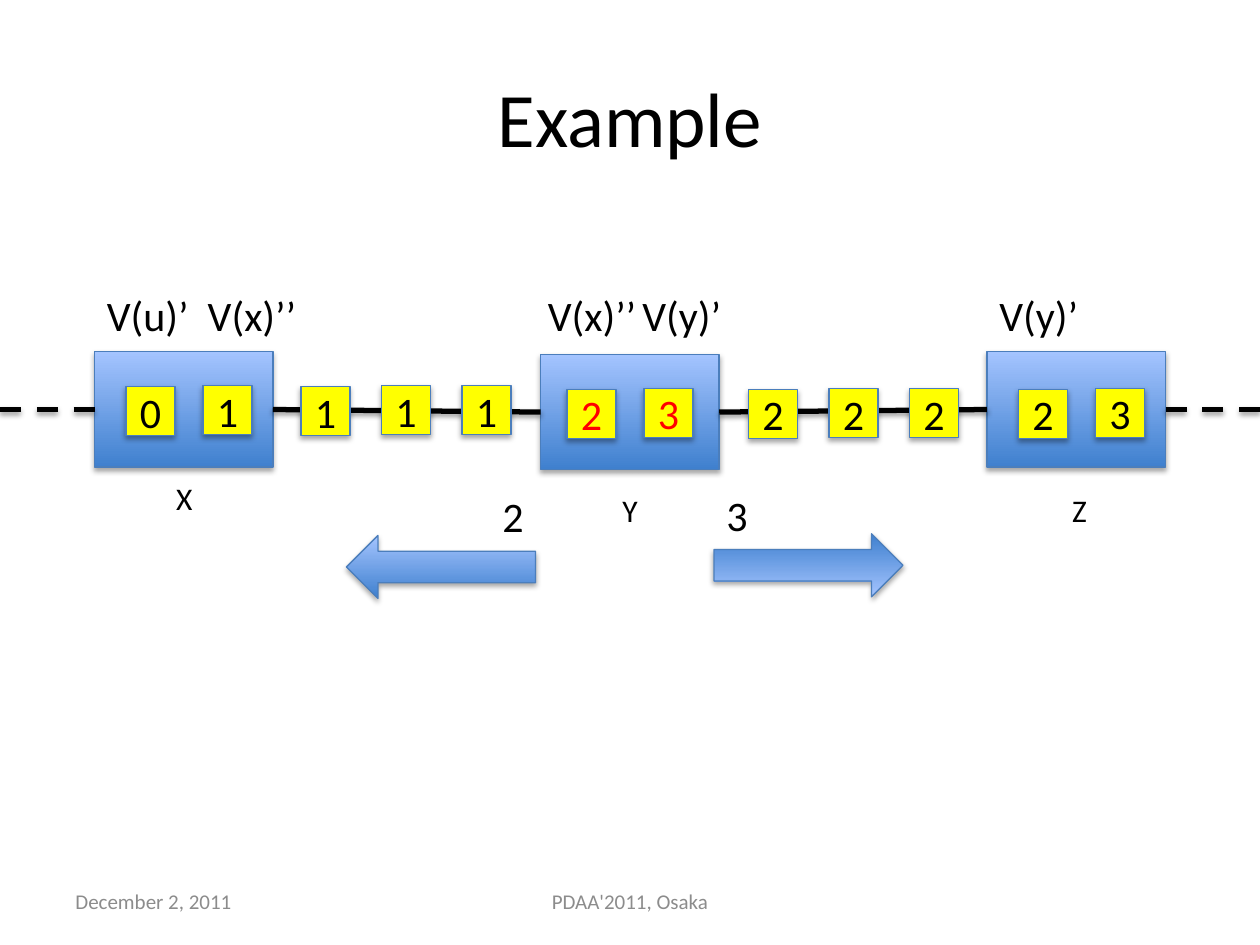
from lxml import etree
from pptx import Presentation
from pptx.dml.color import RGBColor
from pptx.enum.dml import MSO_LINE
from pptx.enum.shapes import MSO_CONNECTOR, MSO_SHAPE
from pptx.enum.text import MSO_ANCHOR, PP_ALIGN
from pptx.oxml.ns import qn
from pptx.util import Pt

HUES = {"ink": "000000", "red": "FF0000", "gray": "8C8C8C", "tile": "FFFF00",
        "edge": "4B7EBC", "deep": "3F80CE", "pale": "A4C4FF"}
WIDE, HIGH, SIDE = 102, 66, 28


def hue(name):
    return RGBColor.from_string(HUES[name])


def shade(shape, alpha, gap):
    props = shape._element.spPr
    for old in props.findall(qn("a:effectLst")):
        props.remove(old)
    group = etree.SubElement(props, qn("a:effectLst"))
    outer = etree.SubElement(group, qn("a:outerShdw"), blurRad=str(Pt(3.1)),
                             dist=str(Pt(gap)), dir="5400000", rotWithShape="0")
    tint = etree.SubElement(outer, qn("a:srgbClr"), val=HUES["ink"])
    etree.SubElement(tint, qn("a:alpha"), val=str(alpha * 1000))


def write(shape, text, size, color="ink", align=PP_ALIGN.LEFT, anchor=MSO_ANCHOR.TOP):
    frame = shape.text_frame
    frame.text = text
    frame.vertical_anchor = anchor
    para = frame.paragraphs[0]
    para.alignment = align
    for run in para.runs:
        run.font.name = "Calibri"
        run.font.size = Pt(size)
        run.font.color.rgb = hue(color)
    return para


def label(slide, box, text, size=24, wrap=False, **style):
    shape = slide.shapes.add_textbox(*map(Pt, box))
    shape.text_frame.word_wrap = wrap
    return write(shape, text, size, **style)


def block(slide, kind, box, flat=None):
    shape = slide.shapes.add_shape(kind, *map(Pt, box))
    if flat:
        shape.fill.solid()
        shape.fill.fore_color.rgb = hue(flat)
    else:
        shape.fill.gradient()
        shape.fill.gradient_angle = 90
        for stop, name in zip(shape.fill.gradient_stops, ("deep", "pale")):
            stop.color.rgb = hue(name)
    shape.line.color.rgb = hue("edge")
    shape.line.width = Pt(0.75)
    shade(shape, 35, 1.8)
    return shape


def tiles(slide, left, top, step, digits, color="ink"):
    for i, digit in enumerate(digits):
        box = (left + i * step, top - (0.5 if i else 0), SIDE, SIDE)
        shape = block(slide, MSO_SHAPE.RECTANGLE, box, "tile")
        write(shape, digit, 24, color, PP_ALIGN.CENTER, MSO_ANCHOR.MIDDLE)


def link(slide, start, end, first=None, last=None, dash=False):
    line = slide.shapes.add_connector(MSO_CONNECTOR.STRAIGHT, *map(Pt, start + end))
    if first:
        line.begin_connect(first, 3)
    if last:
        line.end_connect(last, 1)
    line.line.color.rgb = hue("ink")
    line.line.width = Pt(3)
    if dash:
        line.line.dash_style = MSO_LINE.DASH
    shade(line, 38, 1.6)


def chain(slide, left, top):
    tops = (top, top + 1.5, top)
    nodes = [block(slide, MSO_SHAPE.RECTANGLE, (left + i * 255, y, WIDE, HIGH))
             for i, y in enumerate(tops)]
    mids = [y + HIGH / 2 for y in tops]
    x, y, z = nodes
    link(slide, (0, mids[0]), (left, mids[0]), last=x, dash=True)
    link(slide, (left + 510 + WIDE, mids[2]), (720, mids[2]), first=z, dash=True)
    link(slide, (left + WIDE, mids[0]), (left + 255, mids[1]), x, y)
    link(slide, (left + 255 + WIDE, mids[1]), (left + 510, mids[2]), y, z)
    tiles(slide, left + 18, top + 20, 44, "01")
    tiles(slide, left + 270, top + 21.5, 44, "23", "red")
    tiles(slide, left + 528, top + 21.5, 44, "23")
    tiles(slide, left + 118, top + 20, 46, "111")
    tiles(slide, left + 373.7, top + 21.7, 46, "222")


def names(slide, left, top):
    for x, y, text in ((39.6, 108, "X"), (294.5, 115.2, "Y"), (551.5, 115.2, "Z")):
        label(slide, (left + x, top + y, 24, 29), text, 18)
    for x, wide, text in ((252, 66, "V(x)’’"), (306, 60, "V(y)’"), (510, 60, "V(y)’")):
        label(slide, (left + x, top, wide, 36), text)
    para = label(slide, (left, top, 132, 36), "V(u)’\tV(x)’’", wrap=True)
    stops = etree.SubElement(para._p.get_or_add_pPr(), qn("a:tabLst"))
    etree.SubElement(stops, qn("a:tab"), pos=str(Pt(57.6)), algn="l")


def arrow(slide, box, text, place, turn=0):
    shape = block(slide, MSO_SHAPE.LEFT_ARROW, box)
    shape.rotation = turn
    label(slide, place, text, wrap=True)


def heading(slide, box, text):
    title = slide.shapes.title
    title.left, title.top, title.width, title.height = map(Pt, box)
    write(title, text, 44, align=PP_ALIGN.CENTER, anchor=MSO_ANCHOR.MIDDLE)


def footer(slide, top):
    for left, wide, text, align in (
            (36, 168, "December 2, 2011", PP_ALIGN.LEFT),
            (246, 228, "PDAA'2011, Osaka", PP_ALIGN.CENTER)):
        label(slide, (left, top, wide, 28.75), text, 12, True, color="gray",
              align=align, anchor=MSO_ANCHOR.MIDDLE)


def main():
    deck = Presentation()
    deck.slide_width, deck.slide_height = Pt(720), Pt(540)
    slide = deck.slides.add_slide(deck.slide_layouts[5])
    heading(slide, (36, 21.6, 648, 90), "Example")
    footer(slide, 500.5)
    chain(slide, 54, 201)
    names(slide, 54, 162)
    arrow(slide, (198, 306, 108, 36), "2", (280, 277, 26, 36))
    arrow(slide, (408, 305, 108, 36), "3", (408, 276, 37.5, 36), 180)
    deck.save("out.pptx")


if __name__ == "__main__":
    main()
